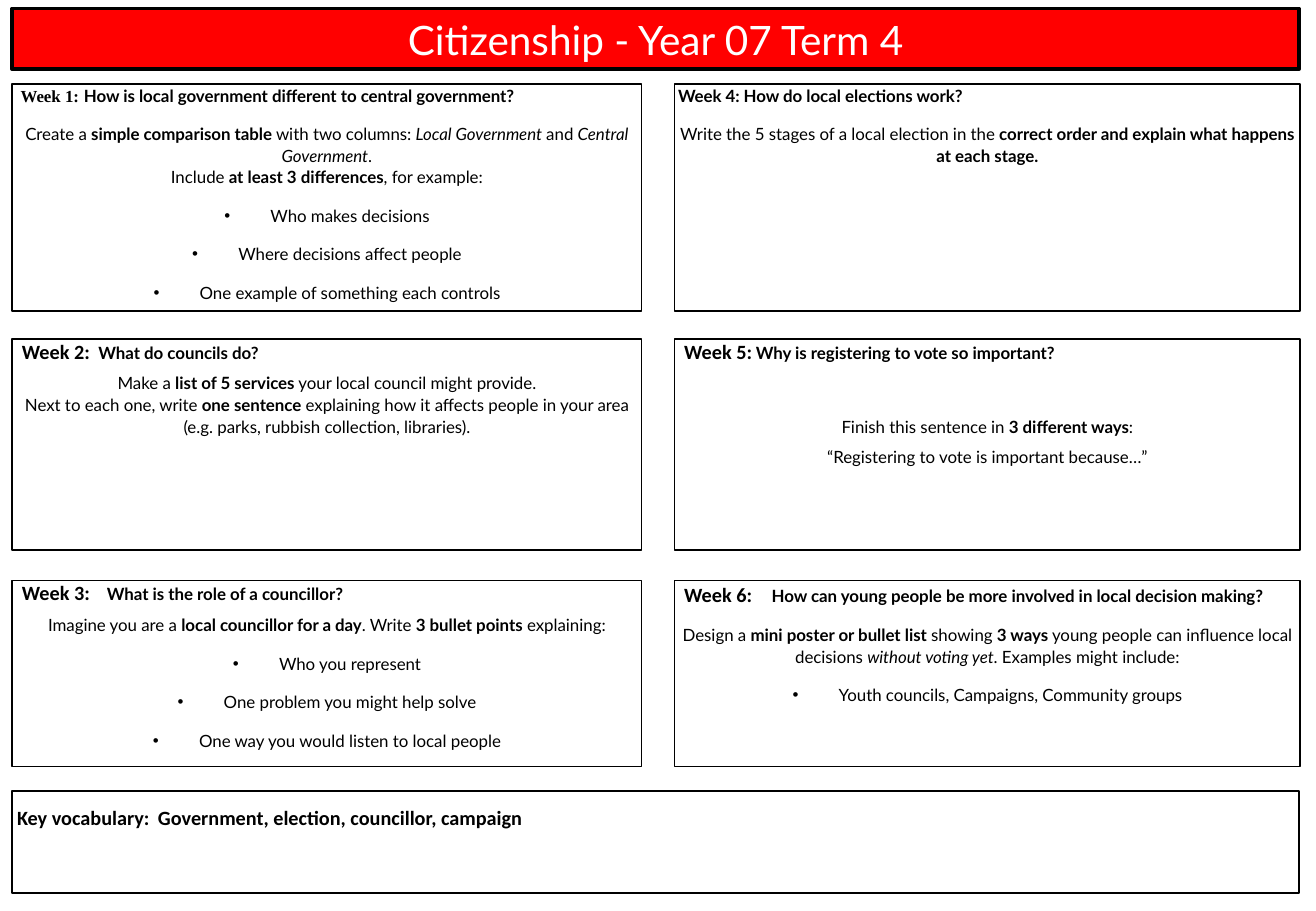
from copy import deepcopy
from dataclasses import dataclass

from lxml import etree
from pptx import Presentation
from pptx.dml.color import RGBColor
from pptx.enum.shapes import MSO_SHAPE
from pptx.enum.text import MSO_ANCHOR, PP_ALIGN
from pptx.oxml.ns import qn
from pptx.util import Inches, Pt

RECTANGLE = MSO_SHAPE.RECTANGLE
TOP, MIDDLE = MSO_ANCHOR.TOP, MSO_ANCHOR.MIDDLE
LEFT, CENTER = PP_ALIGN.LEFT, PP_ALIGN.CENTER


@dataclass(frozen=True)
class Theme:
    """Colours, fonts, sizes and spacing of the slide."""
    black: RGBColor = RGBColor(0, 0, 0)
    white: RGBColor = RGBColor(255, 255, 255)
    red: RGBColor = RGBColor(255, 0, 0)
    lato: str = "Lato"
    calibri: str = "Calibri"
    times: str = "Times New Roman"
    title_size: int = 24
    label_size: int = 12
    body_size: int = 10
    gap: int = 5
    line_spacing: float = 1.07


THEME = Theme()


@dataclass(frozen=True)
class Week:
    """Wording and heading layout of one weekly task."""
    label: str
    question: str
    tabs: tuple
    body: tuple
    bullets: tuple = ()
    label_font: str = THEME.calibri
    label_size: int = THEME.label_size
    loose_heading: bool = False
    body_gap: int = THEME.gap


COLUMNS = ((0.1, 5.18), (5.55, 5.15))
ROWS = ((0.69, 1.87), (2.79, 1.74), (4.78, 1.53))
WEEKS = (
    Week("Week 1:", "How is local government different to central government?", (0.07, 0.59),
         ("Create a **simple comparison table** with two columns: _Local Government_ and "
          "_Central Government_.\nInclude **at least 3 differences**, for example:",),
         ("Who makes decisions", "Where decisions affect people",
          "One example of something each controls"),
         THEME.times, THEME.body_size, True),
    Week("Week 2:", "What do councils do?", (0.08, 0.71),
         ("Make a **list of 5 services** your local council might provide.\n"
          "Next to each one, write **one sentence** explaining how it affects people "
          "in your area (e.g. parks, rubbish collection, libraries).",)),
    Week("Week 3:", "What is the role of a councillor?", (0.08, 0.78),
         ("Imagine you are a **local councillor for a day**. "
          "Write **3 bullet points** explaining:",),
         ("Who you represent", "One problem you might help solve",
          "One way you would listen to local people")),
    Week("Week 4:", "How do local elections work?", (0.03, 0.57),
         ("Write the 5 stages of a local election in the "
          "**correct order and explain what happens at each stage.**",),
         (), THEME.lato, THEME.body_size, True),
    Week("Week 5:", "Why is registering to vote so important?", (0.08, 0.67),
         ("Finish this sentence in **3 different ways**:",
          "“Registering to vote is important because…”"), body_gap=31),
    Week("Week 6:", "How can young people be more involved in local decision making?",
         (0.08, 0.8),
         ("Design a **mini poster or bullet list** showing **3 ways** young people can "
          "influence local decisions _without voting yet_. Examples might include:",),
         ("Youth councils, Campaigns, Community groups",), loose_heading=True),
)


def add_box(slide, left, top, width, height, line_width=1, fill=None):
    """Add an outlined rectangle and return its text frame."""
    shape = slide.shapes.add_shape(
        RECTANGLE, Inches(left), Inches(top), Inches(width), Inches(height))
    shape.shadow.inherit = False
    shape.line.color.rgb = THEME.black
    shape.line.width = Pt(line_width)
    if fill is None:
        shape.fill.background()
    else:
        shape.fill.solid()
        shape.fill.fore_color.rgb = fill
    text_frame = shape.text_frame
    text_frame.word_wrap = True
    return text_frame


def set_margins(text_frame, left=0, top=0):
    """Anchor text at the top with the given left and top margins."""
    text_frame.vertical_anchor = TOP
    text_frame.margin_left, text_frame.margin_top = Inches(left), Inches(top)
    text_frame.margin_right = text_frame.margin_bottom = 0


def add_run(paragraph, text, font, size, color=THEME.black, bold=False, italic=False):
    """Add one formatted run."""
    run = paragraph.add_run()
    run.text = text
    run.font.name, run.font.size = font, Pt(size)
    run.font.bold, run.font.italic = bold, italic
    run.font.color.rgb = color
    return run


def add_tabs(paragraph, positions):
    """Add left tab stops at positions in inches."""
    tab_list = etree.SubElement(paragraph._p.get_or_add_pPr(), qn("a:tabLst"))
    for position in positions:
        etree.SubElement(tab_list, qn("a:tab"), pos=str(Inches(position)), algn="l")


def add_bullet(paragraph):
    """Give a paragraph a hanging round bullet."""
    properties = paragraph._p.get_or_add_pPr()
    properties.set("marL", str(Inches(0.38)))
    properties.set("indent", str(Inches(-0.38)))
    etree.SubElement(properties, qn("a:buFont"), typeface="Arial")
    etree.SubElement(properties, qn("a:buChar"), char="•")
    add_tabs(paragraph, (0.5,))


def add_marked_text(paragraph, text):
    """Add text where ** marks bold, _ marks italic and newlines break lines."""
    for bold_index, part in enumerate(text.split("**")):
        for italic_index, piece in enumerate(part.split("_")):
            for line_index, line in enumerate(piece.split("\n")):
                if line_index:
                    paragraph.add_line_break()
                if line:
                    add_run(paragraph, line, THEME.lato, THEME.body_size,
                            bold=bold_index % 2 == 1, italic=italic_index % 2 == 1)
    for line_break in paragraph._p.findall(qn("a:br")):
        line_break.append(deepcopy(paragraph.runs[0].font._rPr))


def add_body_paragraph(text_frame, text, space_before, bulleted=False):
    """Add a centred paragraph of task text."""
    paragraph = text_frame.add_paragraph()
    if bulleted:
        add_bullet(paragraph)
    paragraph.alignment = CENTER
    paragraph.line_spacing = THEME.line_spacing
    paragraph.space_before = Pt(space_before)
    paragraph.space_after = Pt(THEME.gap)
    add_marked_text(paragraph, text)


def add_week(slide, week, column, row):
    """Add the box of one week with heading, task and bullets."""
    (left, width), (top, height) = column, row
    text_frame = add_box(slide, left, top, width, height)
    set_margins(text_frame)
    heading = text_frame.paragraphs[0]
    add_tabs(heading, week.tabs)
    heading.alignment = LEFT
    if week.loose_heading:
        heading.line_spacing = THEME.line_spacing
        heading.space_after = Pt(THEME.gap)
    add_run(heading, f"\t{week.label}\t", week.label_font, week.label_size, bold=True)
    add_run(heading, week.question, THEME.lato, THEME.body_size, bold=True)
    for index, text in enumerate(week.body):
        add_body_paragraph(text_frame, text, 0 if index else week.body_gap)
    for text in week.bullets:
        add_body_paragraph(text_frame, text, THEME.gap, bulleted=True)


def add_title(slide, text):
    """Add the red title bar."""
    text_frame = add_box(slide, 0.1, 0.07, 10.59, 0.5, 2.25, THEME.red)
    text_frame.vertical_anchor = MIDDLE
    paragraph = text_frame.paragraphs[0]
    paragraph.alignment = CENTER
    add_run(paragraph, text, THEME.lato, THEME.title_size, THEME.white)


def add_vocabulary(slide, label, words):
    """Add the key vocabulary box."""
    text_frame = add_box(slide, 0.1, 6.51, 10.59, 0.84)
    set_margins(text_frame, 0.04, 0.16)
    paragraph = text_frame.paragraphs[0]
    add_tabs(paragraph, (1.16,))
    paragraph.alignment = LEFT
    paragraph.line_spacing = Pt(11.5)
    add_run(paragraph, f"{label}\t{words}", THEME.calibri, THEME.label_size, bold=True)


def main():
    """Build and save the slide."""
    presentation = Presentation()
    presentation.slide_width, presentation.slide_height = Inches(10.83), Inches(7.5)
    slide = presentation.slides.add_slide(presentation.slide_layouts[6])
    add_title(slide, "Citizenship - Year 07 Term 4")
    for index, week in enumerate(WEEKS):
        column, row = divmod(index, len(ROWS))
        add_week(slide, week, COLUMNS[column], ROWS[row])
    add_vocabulary(slide, "Key vocabulary:", "Government, election, councillor, campaign")
    presentation.save("out.pptx")


if __name__ == "__main__":
    main()
